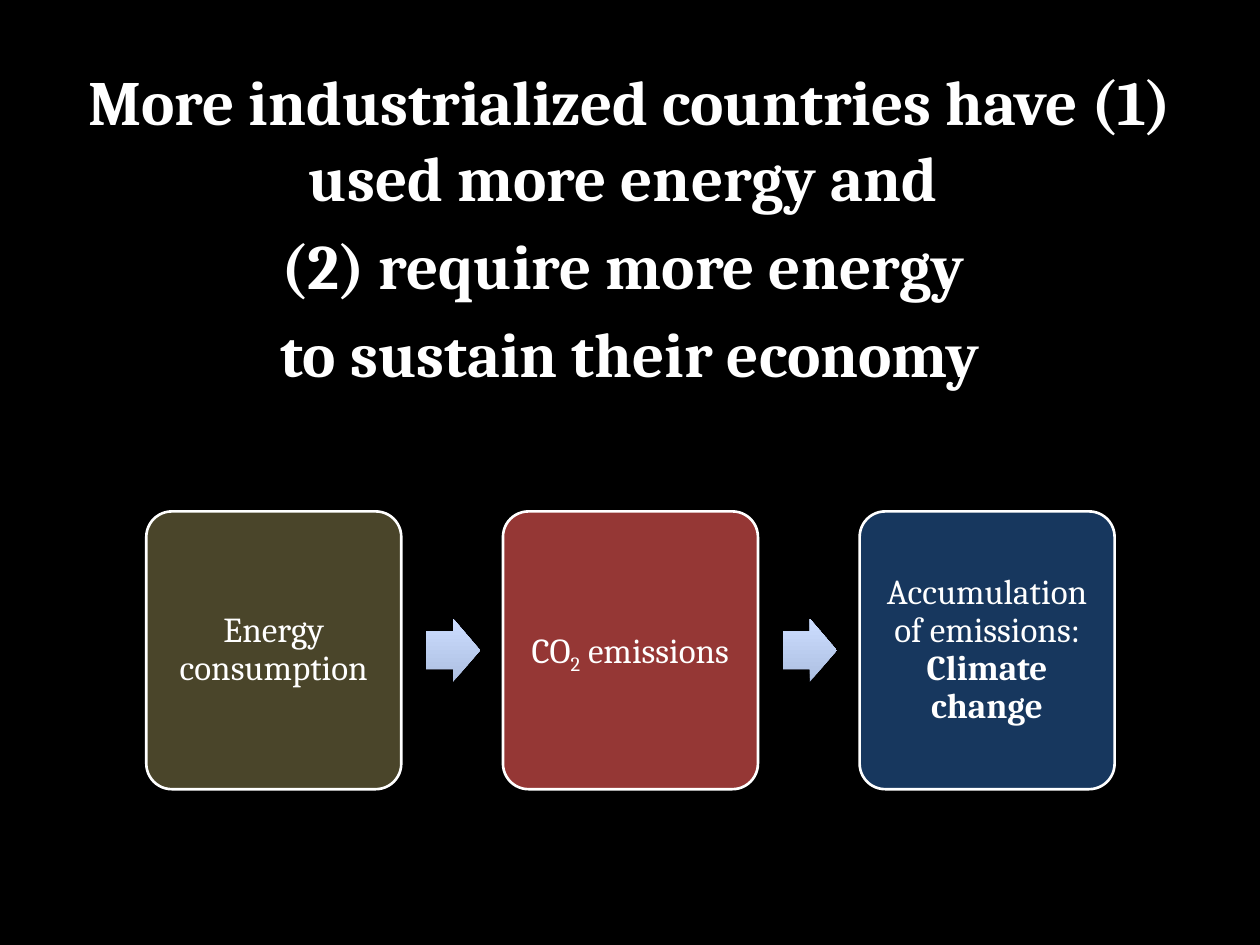
import pptx
import pptx.util
from dataclasses import dataclass
from pptx.dml.color import RGBColor
from pptx.enum.shapes import MSO_SHAPE
from pptx.enum.text import MSO_ANCHOR, PP_ALIGN
from pptx.util import Cm, Pt


@dataclass(frozen=True)
class Theme:
    font: str = "Cambria"
    background: RGBColor = RGBColor(0x00, 0x00, 0x00)
    text: RGBColor = RGBColor(0xFF, 0xFF, 0xFF)
    energy: RGBColor = RGBColor(0x4A, 0x45, 0x2A)
    emissions: RGBColor = RGBColor(0x95, 0x37, 0x35)
    climate: RGBColor = RGBColor(0x17, 0x37, 0x5E)
    arrow_bottom: RGBColor = RGBColor(0xAD, 0xBF, 0xE1)
    arrow_top: RGBColor = RGBColor(0xCC, 0xDD, 0xFF)
    title_size: pptx.util.Length = Pt(36)
    step_size: pptx.util.Length = Pt(20)


theme = Theme()


def add_plain_shape(kind, left, top, width, height):
    """Add a preset shape without shadow or outline."""
    shape = slide.shapes.add_shape(kind, left, top, width, height)
    shape.shadow.inherit = False
    shape.line.fill.background()
    return shape


def add_paragraph(text_frame, runs, size, paragraph_format):
    """Fill the first paragraph, or a new one, with (text, font values) runs."""
    paragraph = text_frame.paragraphs[0]
    if paragraph.runs:
        paragraph = text_frame.add_paragraph()
    paragraph.alignment = PP_ALIGN.CENTER
    for name, value in paragraph_format.items():
        setattr(paragraph, name, value)
    for text, font_values in runs:
        run = paragraph.add_run()
        run.text = text
        run.font.color.rgb = theme.text
        for name, value in {"name": theme.font, "size": size, **font_values}.items():
            if name == "baseline":
                run.font._element.set(name, value)
            else:
                setattr(run.font, name, value)


presentation = pptx.Presentation()
presentation.slide_width = Cm(25.4)
presentation.slide_height = Cm(19.05)
slide = presentation.slides.add_slide(presentation.slide_layouts[6])

backdrop = add_plain_shape(
    MSO_SHAPE.RECTANGLE, 0, 0, presentation.slide_width, presentation.slide_height
)
backdrop.fill.solid()
backdrop.fill.fore_color.rgb = theme.background

# Process: three steps with an arrow between neighbours
steps = [
    (theme.energy, [("Energy consumption", {})]),
    (theme.emissions, [("CO", {}), ("2", {"baseline": "-25000"}), (" emissions", {})]),
    (theme.climate, [("Accumulation of emissions: ", {}), ("Climate change", {"bold": True})]),
]
first_left, step_top, pitch = Cm(2.95), Cm(10.31), Cm(7.19)
step_width, step_height = Cm(5.14), Cm(5.6)
arrow_width, arrow_height = Cm(1.09), Cm(1.27)
arrow_gap = Cm(0.5)

for index, (color, runs) in enumerate(steps):
    left = first_left + index * pitch
    step = add_plain_shape(
        MSO_SHAPE.ROUNDED_RECTANGLE, left, step_top, step_width, step_height
    )
    step.adjustments[0] = 0.1
    step.fill.solid()
    step.fill.fore_color.rgb = color
    step.line.color.rgb = theme.text
    step.line.width = Pt(1.5)
    text_frame = step.text_frame
    text_frame.word_wrap = True
    text_frame.vertical_anchor = MSO_ANCHOR.MIDDLE
    for side in ("left", "top", "right", "bottom"):
        setattr(text_frame, f"margin_{side}", Cm(0.2))
    add_paragraph(text_frame, runs, theme.step_size, {"line_spacing": 0.9})

    if index < len(steps) - 1:
        arrow = add_plain_shape(
            MSO_SHAPE.RIGHT_ARROW,
            left + step_width + arrow_gap,
            step_top + (step_height - arrow_height) // 2,
            arrow_width,
            arrow_height,
        )
        arrow.adjustments[0] = 0.6
        arrow.adjustments[1] = 0.5
        arrow.fill.gradient()
        arrow.fill.gradient_angle = 90
        for stop, position, stop_color in zip(
            arrow.fill.gradient_stops, (0, 1), (theme.arrow_bottom, theme.arrow_top)
        ):
            stop.position = position
            stop.color.rgb = stop_color

# Statement
statement = slide.shapes.add_textbox(Cm(1.27), Cm(1.14), Cm(22.86), Cm(12.57))
statement.text_frame.word_wrap = True
for line in (
    "More industrialized countries have (1) used more energy and ",
    "(2) require more energy ",
    "to sustain their economy",
):
    add_paragraph(
        statement.text_frame, [(line, {"bold": True})], theme.title_size, {"space_before": Pt(7.2)}
    )

presentation.save("out.pptx")
